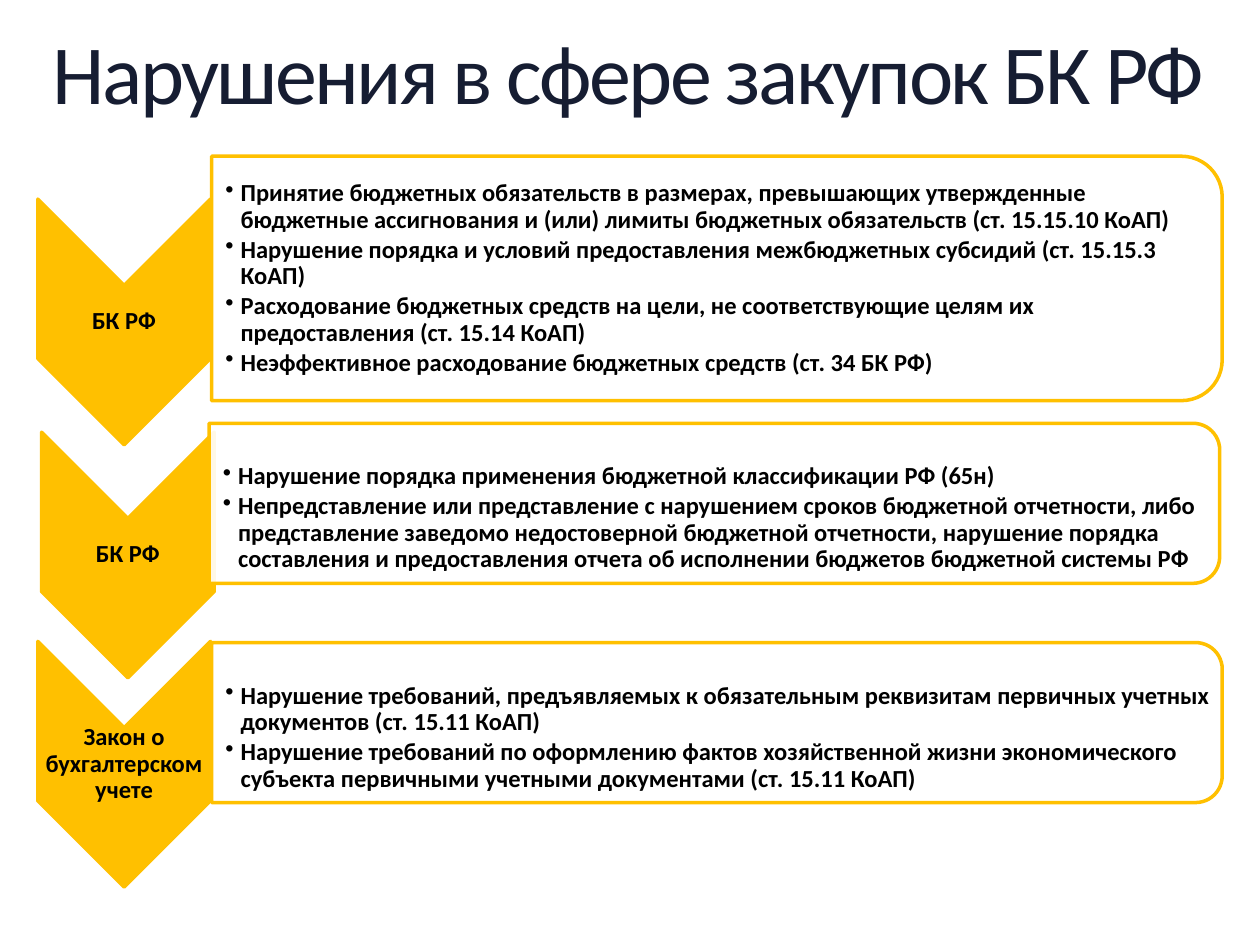
"""Build a slide of three chevron rows listing procurement violations."""
import pptx
import pptx.dml.color
import pptx.enum.shapes
import pptx.enum.text
import pptx.oxml.ns
import pptx.util
from lxml import etree

Inches, Pt = pptx.util.Inches, pptx.util.Pt
RGBColor = pptx.dml.color.RGBColor
SHAPE = pptx.enum.shapes.MSO_SHAPE
ANCHOR = pptx.enum.text.MSO_ANCHOR
ALIGN = pptx.enum.text.PP_ALIGN
qn = pptx.oxml.ns.qn

GOLD = RGBColor(0xFF, 0xC0, 0x00)
WHITE = RGBColor(0xFF, 0xFF, 0xFF)
BLACK = RGBColor(0, 0, 0)
NAVY = RGBColor(0x16, 0x1D, 0x32)

TITLE = "Нарушения в сфере закупок БК РФ"
ROWS = [
    dict(label="БК РФ", chevron=(0.3, 1.58), panel=(1.68, 1.24), height=1.94, top_inset=0.01, items=[
        "Принятие бюджетных обязательств в размерах, превышающих утвержденные бюджетные ассигнования и (или) лимиты бюджетных обязательств (ст. 15.15.10 КоАП)",
        "Нарушение порядка и условий предоставления межбюджетных субсидий (ст. 15.15.3 КоАП)",
        "Расходование бюджетных средств на цели, не соответствующие целям их предоставления (ст. 15.14 КоАП)",
        "Неэффективное расходование бюджетных средств (ст. 34 БК РФ)",
    ]),
    dict(label="БК РФ", chevron=(0.33, 3.43), panel=(1.66, 3.36), height=1.27, top_inset=0.25, items=[
        "Нарушение порядка применения бюджетной классификации РФ (65н)",
        "Непредставление или представление с нарушением сроков бюджетной отчетности, либо представление заведомо недостоверной бюджетной отчетности, нарушение порядка составления и предоставления отчета об исполнении бюджетов бюджетной системы РФ",
    ]),
    dict(label="Закон о бухгалтерском учете", chevron=(0.3, 5.09), panel=(1.68, 5.1), height=1.27, top_inset=0.25, items=[
        "Нарушение требований, предъявляемых к обязательным реквизитам первичных учетных документов (ст. 15.11 КоАП)",
        "Нарушение требований по оформлению фактов хозяйственной жизни экономического субъекта первичными учетными документами (ст. 15.11 КоАП)",
    ]),
]
CHEVRON_W, CHEVRON_H = 1.37, 1.95
LABEL_DROP, LABEL_H = 0.68, 0.59
PANEL_W = 8.02


def add_text(s, texts, left, top, width, height, size=14, color=BLACK, bold=True,
             align=ALIGN.LEFT, anchor=ANCHOR.MIDDLE, insets=(0.01, 0.01, 0.01, 0.01),
             after=0, bullet=None, spacing=None):
    tf = s.shapes.add_textbox(Inches(left), Inches(top), Inches(width), Inches(height)).text_frame
    tf.word_wrap = True
    tf.vertical_anchor = anchor
    tf.margin_left, tf.margin_top, tf.margin_right, tf.margin_bottom = map(Inches, insets)
    for i, text in enumerate(texts):
        p = tf.add_paragraph() if i else tf.paragraphs[0]
        if bullet:
            pPr = p._p.get_or_add_pPr()
            pPr.set("marL", str(Inches(0.12)))
            pPr.set("indent", str(-Inches(0.12)))
            etree.SubElement(pPr, qn("a:buChar")).set("char", bullet)
        p.alignment = align
        p.line_spacing = 0.9
        p.space_after = Pt(after)
        r = p.add_run()
        r.text = text
        r.font.name, r.font.size, r.font.bold = "Calibri", Pt(size), bold
        r.font.color.rgb = color
        if spacing:
            r._r.get_or_add_rPr().set("spc", str(spacing))


def add_turned(s, kind, left, top, width, height, fill, alpha=None):
    sp = s.shapes.add_shape(kind, Inches(left + (width - height) / 2),
                            Inches(top + (height - width) / 2), Inches(height), Inches(width))
    sp.rotation = 90
    sp.shadow.inherit = False
    sp.fill.solid()
    sp.fill.fore_color.rgb = fill
    sp.line.color.rgb = GOLD
    sp.line.width = Pt(2)
    if alpha:
        clr = sp._element.spPr.find(qn("a:solidFill")).find(qn("a:srgbClr"))
        etree.SubElement(clr, qn("a:alpha")).set("val", str(alpha * 1000))


def main():
    prs = pptx.Presentation()
    prs.slide_width, prs.slide_height = Inches(10), Inches(7.5)
    s = prs.slides.add_slide(prs.slide_layouts[6])
    add_text(s, [TITLE], 0.42, 0.25, 9.17, 0.73, size=48, color=NAVY, bold=False,
             anchor=ANCHOR.TOP, insets=(0, 0, 0, 0), spacing=-150)
    for row in ROWS:
        left, top = row["chevron"]
        add_turned(s, SHAPE.CHEVRON, left, top, CHEVRON_W, CHEVRON_H, GOLD)
        add_text(s, [row["label"]], left, top + LABEL_DROP, CHEVRON_W, LABEL_H, align=ALIGN.CENTER)
        left, top = row["panel"]
        height = row["height"]
        pad = height * 0.05
        add_turned(s, SHAPE.ROUND_2_SAME_RECTANGLE, left, top, PANEL_W, height, WHITE, alpha=90)
        add_text(s, row["items"], left, top + pad, PANEL_W - pad, height - 2 * pad,
                 insets=(0.11, row["top_inset"], 0.01, 0.01), after=2, bullet="•")
    prs.save("out.pptx")


if __name__ == "__main__":
    main()
